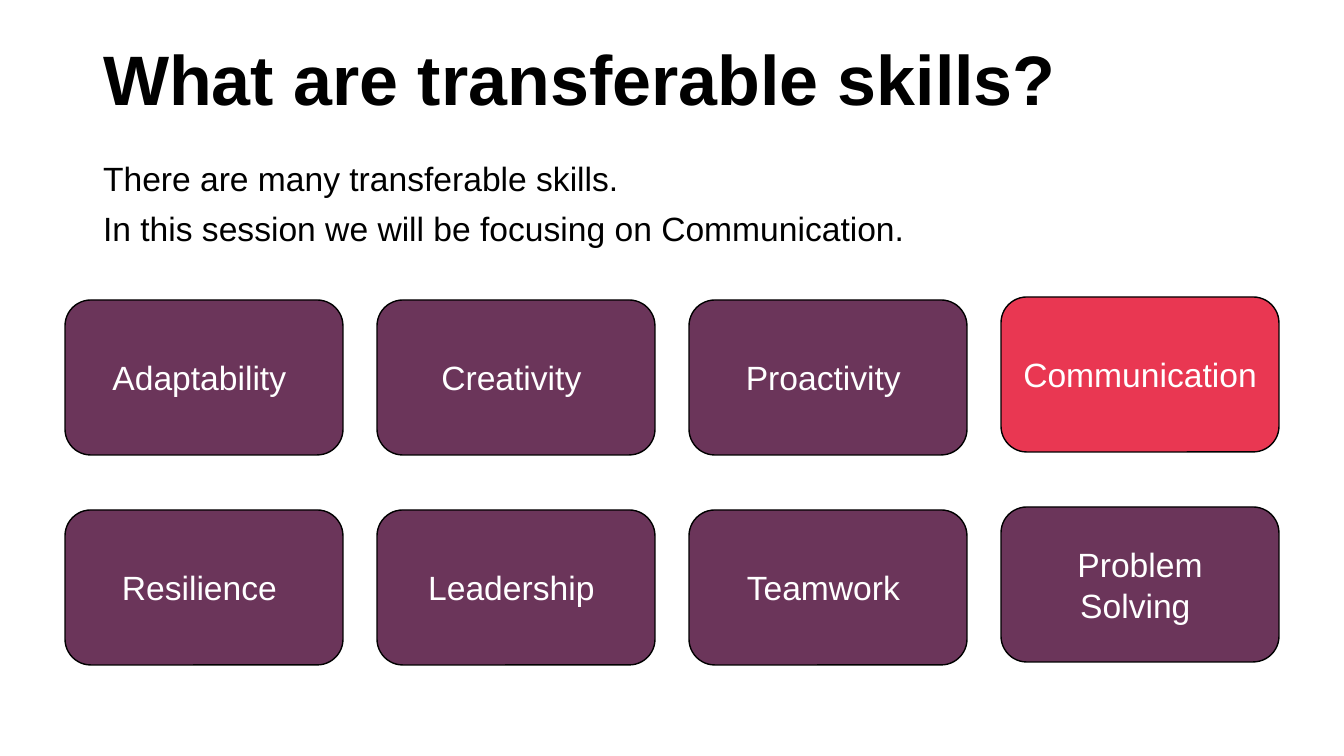
from pptx import Presentation
from pptx.dml.color import RGBColor
from pptx.enum.shapes import MSO_SHAPE
from pptx.enum.text import MSO_ANCHOR, MSO_AUTO_SIZE, PP_ALIGN
from pptx.oxml.ns import qn
from pptx.util import Emu, Pt

COLORS = {"text": "000000", "line": "000000", "card": "6B355A",
          "focus": "E93752", "card_text": "FFFFFF"}
SKILLS = [
    ["Adaptability ", "Creativity ", "Proactivity ", "Communication"],
    ["Resilience ", "Leadership ", "Teamwork ", "Problem Solving "],
]


def px(n):
    """Turn whole pixels into EMU."""
    return Emu(round(n * 914400 / 100.8))


def color(name):
    """Look up a named colour."""
    return RGBColor.from_string(COLORS[name])


class SlideBuilder:
    """Holds the text style and the current slide."""

    font = "Arial"

    def __init__(self, slide):
        """Keep the slide to build on."""
        self.slide = slide

    def place(self, s, x, y, w, h):
        """Move and size a shape."""
        s.left, s.top, s.width, s.height = px(x), px(y), px(w), px(h)

    def style(self, p, size, fill, align, bold=False):
        """Format one paragraph and its runs."""
        p.alignment = align
        for r in p.runs:
            r.font.name, r.font.size, r.font.bold = self.font, Pt(size), bold
            r.font.color.rgb = color(fill)

    def placeholder(self, s, box, text, size, bold=False):
        """Fill a placeholder with plain left-aligned paragraphs."""
        self.place(s, *box)
        tf = s.text_frame
        tf.text = text
        tf.word_wrap = True
        tf.auto_size = MSO_AUTO_SIZE.NONE
        tf.vertical_anchor = MSO_ANCHOR.TOP
        for i, p in enumerate(tf.paragraphs):
            pPr = p._p.get_or_add_pPr()
            pPr.set("marL", "0")
            pPr.set("indent", "0")
            pPr.append(pPr.makeelement(qn("a:buNone"), {}))
            p.line_spacing = 0.9
            p.space_before = Pt(10 if i else 0)
            self.style(p, size, "text", PP_ALIGN.LEFT, bold)

    def card(self, x, y, w, h, text, fill):
        """Add a rounded card with a centred label."""
        s = self.slide.shapes.add_shape(
            MSO_SHAPE.ROUNDED_RECTANGLE, px(x), px(y), px(w), px(h))
        s.shadow.inherit = False
        s.fill.solid()
        s.fill.fore_color.rgb = color(fill)
        s.line.color.rgb = color("line")
        s.line.width = Pt(1)
        tf = s.text_frame
        tf.text = text
        tf.word_wrap = True
        tf.vertical_anchor = MSO_ANCHOR.MIDDLE
        self.style(tf.paragraphs[0], 24, "card_text", PP_ALIGN.CENTER)


def main():
    """Build the slide and save it."""
    prs = Presentation()
    prs.slide_width, prs.slide_height = px(1344), px(756)
    slide = prs.slides.add_slide(prs.slide_layouts[1])
    b = SlideBuilder(slide)
    b.placeholder(slide.shapes.title, (93, 40, 1159, 146),
                  "What are transferable skills?", 50, bold=True)
    b.placeholder(slide.placeholders[1], (93, 157, 1159, 442),
                  "There are many transferable skills.\n"
                  "In this session we will be focusing on Communication.", 24)
    for row, skills in enumerate(SKILLS):
        for col, skill in enumerate(skills):
            lift = 3 if col == 3 else 0
            fill = "focus" if skill == "Communication" else "card"
            b.card(65 + 312 * col, 300 + 210 * row - lift, 278, 155, skill, fill)
    prs.save("out.pptx")


if __name__ == "__main__":
    main()
